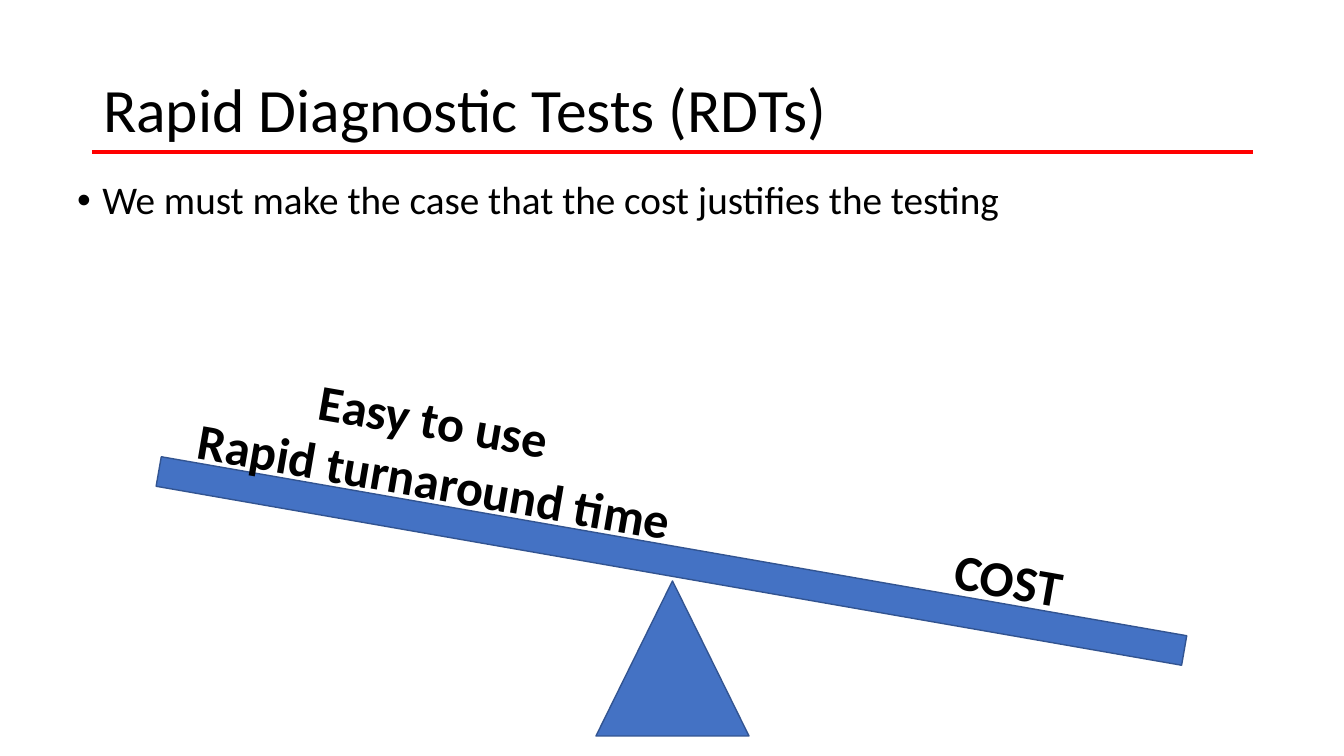
from lxml.etree import SubElement
from pptx import Presentation
from pptx.dml.color import RGBColor
from pptx.enum.shapes import MSO_CONNECTOR, MSO_SHAPE
from pptx.enum.text import MSO_ANCHOR, MSO_AUTO_SIZE, PP_ALIGN
from pptx.oxml.ns import qn
from pptx.util import Inches, Pt

COLORS = {
    "text": "000000",
    "seesaw": "4472C4",
    "outline": "325491",
    "rule": "FF0000",
}
FONT = "Calibri"
TILT = 9.9


def px(*lengths):
    """Turn pixels, 100.8 to the inch, into EMU."""
    return [round(length * Inches(1) / 100.8) for length in lengths]


def write(frame, text, size, align, bold=False):
    frame.text = text
    frame.word_wrap = True
    paragraph = frame.paragraphs[0]
    paragraph.alignment = align
    font = paragraph.runs[0].font
    font.name = FONT
    font.size = Pt(size)
    font.bold = bold
    font.color.rgb = RGBColor.from_string(COLORS["text"])
    return paragraph


deck = Presentation()
deck.slide_width, deck.slide_height = px(1344, 756)
slide = deck.slides.add_slide(deck.slide_layouts[1])
shapes = slide.shapes

# Title and bullet
title = shapes.title
title.left, title.top, title.width, title.height = px(93, 40, 1159, 146)
heading = write(title.text_frame, "Rapid Diagnostic Tests (RDTs)", 44, PP_ALIGN.LEFT)
heading.line_spacing = 0.9
title.text_frame.vertical_anchor = MSO_ANCHOR.MIDDLE

body = slide.placeholders[1]
body.left, body.top, body.width, body.height = px(67, 176, 1210, 95)
case = write(body.text_frame, "We must make the case that the cost justifies the testing",
             28, PP_ALIGN.LEFT)
case.line_spacing = 0.9
case.space_before = Pt(10)
indents = case._p.get_or_add_pPr()
indents.set("marL", str(Inches(0.25)))
indents.set("indent", str(-Inches(0.25)))
SubElement(indents, qn("a:buChar")).set("char", "•")
for placeholder in (title, body):
    placeholder.text_frame.auto_size = MSO_AUTO_SIZE.NONE

# Seesaw: pivot and tilted beam
for preset, box, angle in (
    (MSO_SHAPE.ISOSCELES_TRIANGLE, (596, 581, 153, 155), 0),
    (MSO_SHAPE.RECTANGLE, (151, 546, 1041, 30), TILT),
):
    part = shapes.add_shape(preset, *px(*box))
    part.rotation = angle
    part.shadow.inherit = False
    part.fill.solid()
    part.fill.fore_color.rgb = RGBColor.from_string(COLORS["seesaw"])
    part.line.color.rgb = RGBColor.from_string(COLORS["outline"])
    part.line.width = Pt(1)

# Weights lying on the beam
for weight, left, top, width in (
    ("Rapid turnaround time", 170, 445, 528),
    ("Easy to use", 170, 384, 528),
    ("COST", 822, 543, 374),
):
    label = shapes.add_textbox(*px(left, top, width, 72))
    label.rotation = TILT
    write(label.text_frame, weight, 36, PP_ALIGN.CENTER, bold=True)
    label.text_frame.auto_size = MSO_AUTO_SIZE.SHAPE_TO_FIT_TEXT

# Rule under the title
rule = shapes.add_connector(MSO_CONNECTOR.STRAIGHT, *px(92, 152, 1253, 152))
rule.line.color.rgb = RGBColor.from_string(COLORS["rule"])
rule.line.width = Pt(2.25)
SubElement(rule._element.spPr, qn("a:effectLst"))

deck.save("out.pptx")
